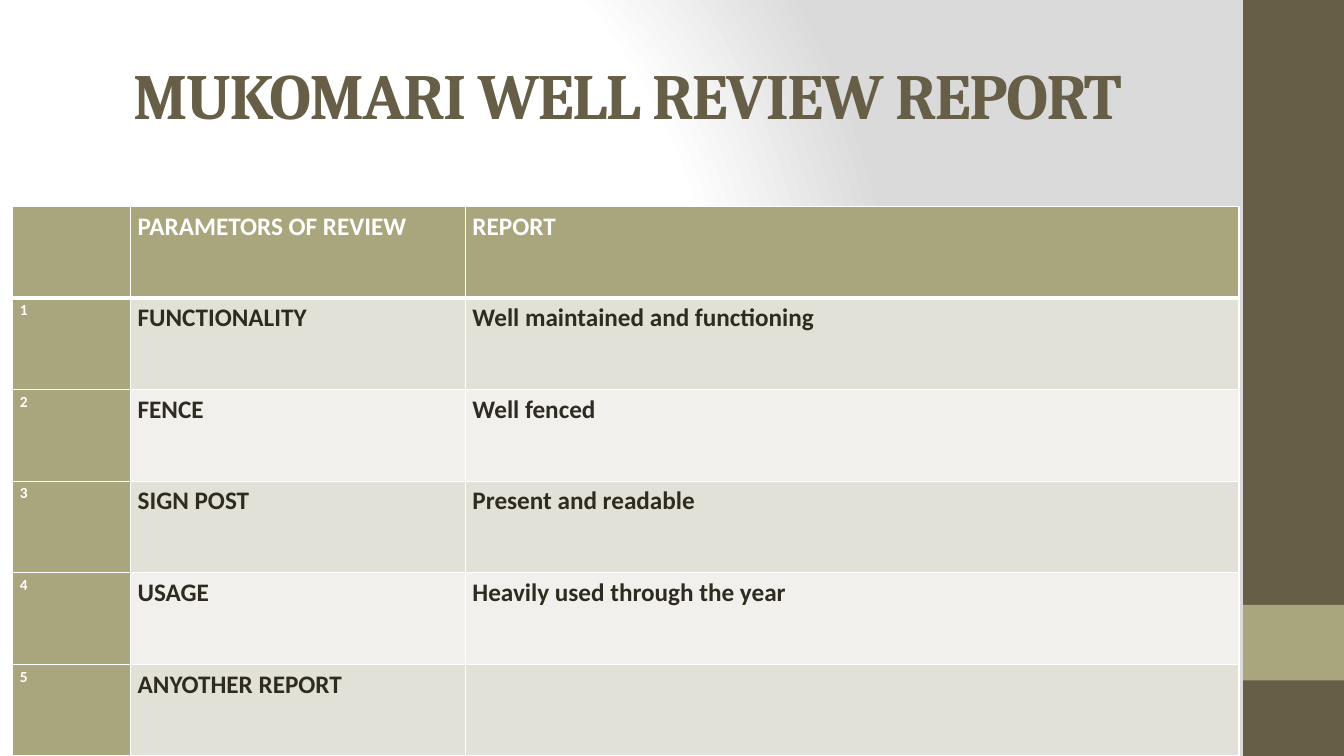
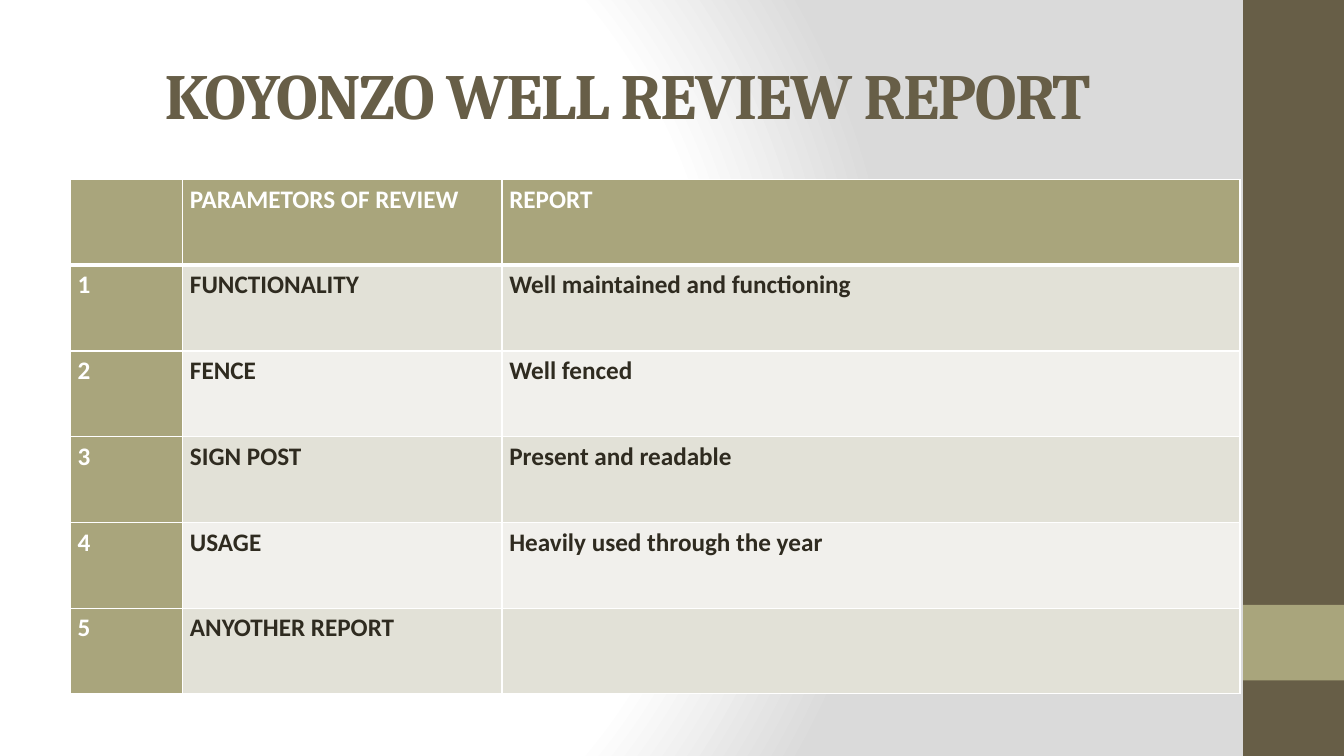
from dataclasses import dataclass

from pptx import Presentation
from pptx.dml.color import RGBColor
from pptx.enum.shapes import MSO_SHAPE
from pptx.enum.text import MSO_ANCHOR, MSO_AUTO_SIZE, PP_ALIGN
from pptx.oxml import parse_xml
from pptx.oxml.ns import nsdecls, qn
from pptx.util import Emu, Pt

SCALE = 9525  # EMU in one px, 96 px to the inch


@dataclass(frozen=True)
class Theme:
    brown: str = "675E47"
    olive: str = "A9A57C"
    ink: str = "2F2B20"
    white: str = "FFFFFF"
    grey: str = "DADADA"
    rows: tuple = ("E2E1D7", "F1F0EC")
    head: str = "Cambria"
    body: str = "Calibri"
    title: int = 46
    text: int = 18
    small: int = 11


THEME = Theme()
WIDE, HIGH = 1280, 720
TITLE = (64, 29, 1067, 120)
SIDE = (1184, 0, 96, HIGH)
SHARES = (96, 273, 631)  # column widths in thousandths
REVIEW = [
    ("", "PARAMETORS OF REVIEW", "REPORT"),
    ("1", "FUNCTIONALITY", "Well maintained and functioning"),
    ("2", "FENCE", "Well fenced"),
    ("3", "SIGN POST", "Present and readable"),
    ("4", "USAGE", "Heavily used through the year"),
    ("5", "ANYOTHER REPORT", ""),
]
# title, table box, size of the row numbers
WELLS = [
    ("MUKOMARI WELL REVIEW REPORT", (12, 197, 1168, 523), THEME.small),
    ("KOYONZO WELL REVIEW REPORT", (67, 171, 1114, 490), THEME.text),
]


def px(count):
    return Emu(round(count * SCALE))


def paint(fill, color):
    fill.solid()
    fill.fore_color.rgb = RGBColor.from_string(color)


def style(font, name, size, color):
    font.name, font.size, font.bold = name, Pt(size), True
    font.color.rgb = RGBColor.from_string(color)


def set_back(master):
    """Give the master a round gradient, white to grey."""
    master.background.fill.solid()
    solid = master.element.xpath("./p:cSld/p:bg/p:bgPr/a:solidFill")[0]
    stops = ((0, THEME.white), (75, THEME.white), (100, THEME.grey))
    marks = "".join(
        f'<a:gs pos="{at * 1000}"><a:srgbClr val="{color}"/></a:gs>'
        for at, color in stops)
    grad = parse_xml(
        f'<a:gradFill {nsdecls("a")} rotWithShape="1"><a:gsLst>{marks}</a:gsLst>'
        '<a:path path="circle"><a:fillToRect l="20000" t="50000" r="100000"'
        ' b="50000"/></a:path></a:gradFill>')
    solid.getparent().replace(solid, grad)


def add_side(slide, master, box):
    """Draw the side band and its accent, then move both to the master."""
    left, top, wide, high = box
    parts = (((left, top, wide, high), THEME.brown),
             ((left, top + high * 0.8, wide, high * 0.1), THEME.olive))
    for code, (area, color) in enumerate(parts, 101):
        band = slide.shapes.add_shape(MSO_SHAPE.RECTANGLE, *map(px, area))
        band.shadow.inherit = False
        paint(band.fill, color)
        band.line.fill.background()
        band.element.xpath("./p:nvSpPr/p:cNvPr")[0].set("id", str(code))
        master.shapes.element.append(band.element)


def add_title(slide, text, box):
    title = slide.shapes.title
    title.left, title.top, title.width, title.height = map(px, box)
    frame = title.text_frame
    frame.text = text
    frame.word_wrap = True
    frame.auto_size = MSO_AUTO_SIZE.NONE
    frame.vertical_anchor = MSO_ANCHOR.MIDDLE
    para = frame.paragraphs[0]
    para.alignment = PP_ALIGN.CENTER
    style(para.font, THEME.head, THEME.title, THEME.brown)
    for props in title.element.iter(qn("a:defRPr")):
        props.set("spc", "-100")


def add_edges(cell, base):
    """Put white lines round a cell; base is the width of the lower one."""
    props = cell._tc.get_or_add_tcPr()
    for spot, (side, width) in enumerate(
            (("L", 1), ("R", 1), ("T", 1), ("B", base))):
        props.insert(spot, parse_xml(
            f'<a:ln{side} {nsdecls("a")} w="{Pt(width)}"><a:solidFill>'
            f'<a:srgbClr val="{THEME.white}"/></a:solidFill></a:ln{side}>'))


def fill_cell(cell, text, fill, color, size):
    paint(cell.fill, fill)
    cell.margin_left = cell.margin_right = px(7)
    cell.margin_top = cell.margin_bottom = 0
    if text:
        cell.text = text
        para = cell.text_frame.paragraphs[0]
        para.line_spacing = 1.15
        style(para.font, THEME.body, size, color)


def add_review(slide, box, small):
    """Lay the review table in box, with row numbers of size small."""
    frame = slide.shapes.add_table(len(REVIEW), len(SHARES), *map(px, box))
    table = frame.table
    table.first_col = True
    for col, share in zip(table.columns, SHARES):
        col.width = px(box[2] * share / 1000)
    for r, texts in enumerate(REVIEW):
        table.rows[r].height = px(box[3] / len(REVIEW))
        for c, text in enumerate(texts):
            cell = table.cell(r, c)
            dark = r == 0 or c == 0
            fill_cell(cell, text,
                      THEME.olive if dark else THEME.rows[(r - 1) % 2],
                      THEME.white if dark else THEME.ink,
                      small if c == 0 else THEME.text)
            add_edges(cell, 3 if r == 0 else 1)


def main():
    deck = Presentation()
    deck.slide_width, deck.slide_height = px(WIDE), px(HIGH)
    master = deck.slide_master
    set_back(master)
    for text, box, small in WELLS:
        slide = deck.slides.add_slide(deck.slide_layouts[5])
        add_title(slide, text, TITLE)
        add_review(slide, box, small)
    add_side(slide, master, SIDE)
    deck.save("out.pptx")


if __name__ == "__main__":
    main()
